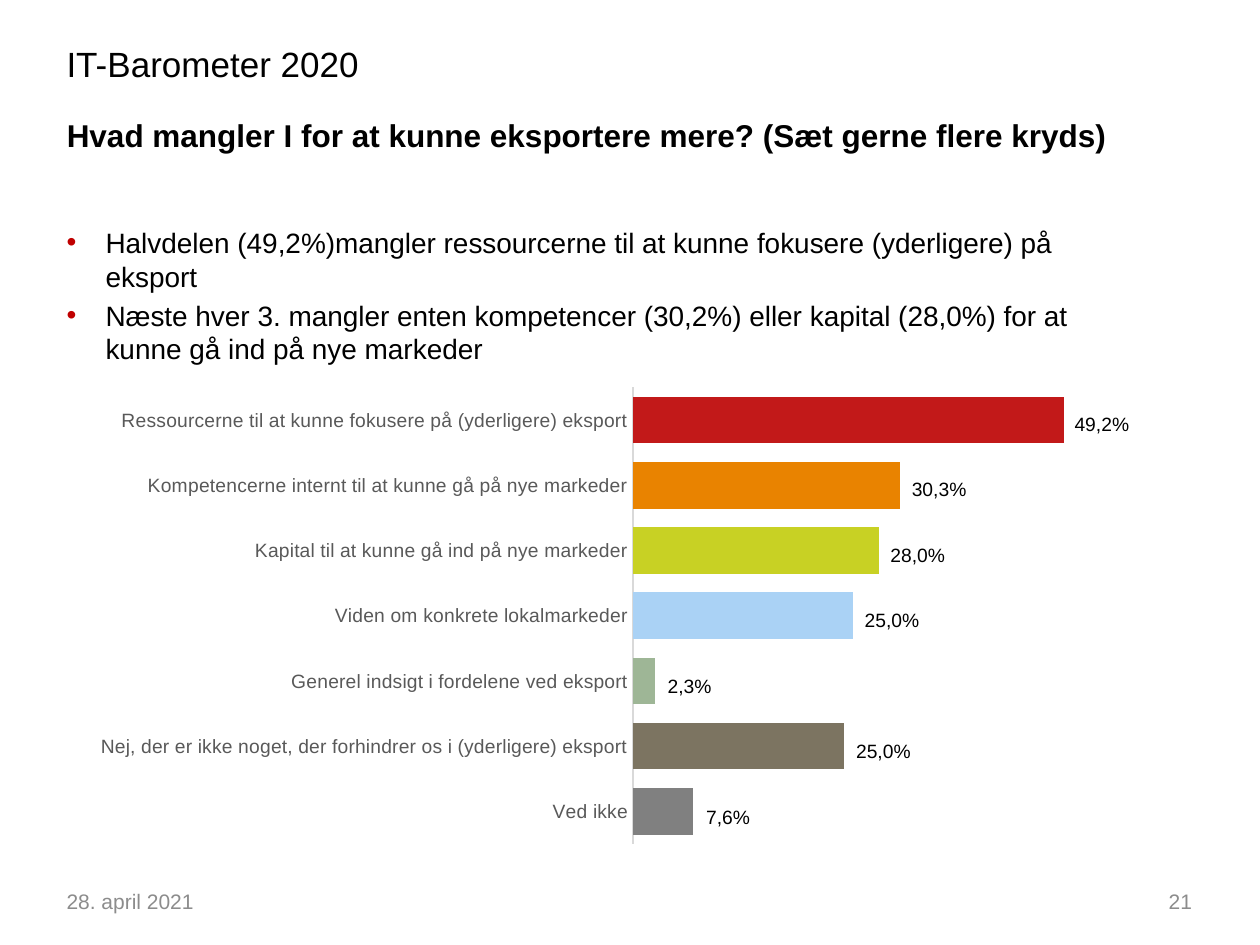
"""Build the IT-Barometer slide on what companies need to export more."""
from typing import NamedTuple

from lxml import etree
from pptx import Presentation
from pptx.chart.data import CategoryChartData
from pptx.dml.color import RGBColor
from pptx.enum.chart import XL_CHART_TYPE, XL_TICK_MARK
from pptx.enum.text import MSO_ANCHOR, MSO_AUTO_SIZE, PP_ALIGN
from pptx.oxml import parse_xml
from pptx.oxml.ns import nsdecls, qn
from pptx.util import Inches, Pt

BAR = XL_CHART_TYPE.BAR_CLUSTERED
NO_TICK = XL_TICK_MARK.NONE
TOP, MIDDLE = MSO_ANCHOR.TOP, MSO_ANCHOR.MIDDLE
LEFT, RIGHT = PP_ALIGN.LEFT, PP_ALIGN.RIGHT
GROW, FIXED = MSO_AUTO_SIZE.SHAPE_TO_FIT_TEXT, MSO_AUTO_SIZE.NONE

FONT = "Arial"
BLACK, GREY = "000000", "8C8C8C"
AXIS_X, UNIT = 5.03, 0.034
LABEL_TOP, LABEL_STEP = 3.22, 0.52
PLOT = {"x": 0.507, "y": 0.032, "w": 0.479, "h": 0.922}


class Answer(NamedTuple):
    text: str
    value: int
    share: str
    color: str


class Label(NamedTuple):
    text: str
    box: tuple
    size: int
    color: str = BLACK
    align: PP_ALIGN = LEFT
    anchor: MSO_ANCHOR = TOP


ANSWERS = [
    Answer("Ressourcerne til at kunne fokusere på (yderligere) eksport", 100, "49,2%", "C21919"),
    Answer("Kompetencerne internt til at kunne gå på nye markeder", 62, "30,3%", "E98300"),
    Answer("Kapital til at kunne gå ind på nye markeder", 57, "28,0%", "C8D124"),
    Answer("Viden om konkrete lokalmarkeder", 51, "25,0%", "AAD2F5"),
    Answer("Generel indsigt i fordelene ved eksport", 5, "2,3%", "9EB696"),
    Answer("Nej, der er ikke noget, der forhindrer os i (yderligere) eksport", 49, "25,0%", "7C7461"),
    Answer("Ved ikke", 14, "7,6%", "808080"),
]
LABELS = [
    Label("IT-Barometer 2020", (0.43, 0.29, 3.17, 0.4), 20),
    Label("28. april 2021", (0.43, 6.95, 2.33, 0.4), 12, GREY, LEFT, MIDDLE),
    Label("21", (7.23, 6.95, 2.33, 0.4), 12, GREY, RIGHT, MIDDLE),
]
TITLE = "Hvad mangler I for at kunne eksportere mere? (Sæt gerne flere kryds)"
BULLETS = [
    "Halvdelen (49,2%)mangler ressourcerne til at kunne fokusere (yderligere) på eksport",
    "Næste hver 3. mangler enten kompetencer (30,2%) eller kapital (28,0%) for at kunne gå ind på nye markeder",
]


def rgb(color: str) -> RGBColor:
    """Turn a hex string into a colour."""
    return RGBColor.from_string(color)


def set_font(font, size: int, color: str = BLACK, bold: bool = False) -> None:
    """Apply the slide's typeface with a size, colour and weight."""
    for name, value in {"name": FONT, "size": Pt(size), "bold": bold}.items():
        setattr(font, name, value)
    font.color.rgb = rgb(color)


def add_label(s, label: Label, wrap: bool = True):
    """Add a one-paragraph text box."""
    sp = s.shapes.add_textbox(*map(Inches, label.box))
    tf = sp.text_frame
    formats = {
        "text": label.text,
        "word_wrap": wrap,
        "vertical_anchor": label.anchor,
        "auto_size": FIXED if wrap else GROW,
    }
    for name, value in formats.items():
        setattr(tf, name, value)
    p = tf.paragraphs[0]
    p.alignment = label.align
    set_font(p.runs[0].font, label.size, label.color)


def add_title(s) -> None:
    """Place and format the title placeholder."""
    sp = s.shapes.title
    sp.left, sp.top, sp.width, sp.height = map(Inches, (0.43, 0.87, 9, 0.55))
    tf = sp.text_frame
    formats = {"text": TITLE, "word_wrap": True, "vertical_anchor": TOP, "auto_size": FIXED}
    for name, value in formats.items():
        setattr(tf, name, value)
    p = tf.paragraphs[0]
    p.alignment = LEFT
    set_font(p.runs[0].font, 18, bold=True)


def add_bullets(s) -> None:
    """Add the bulleted findings."""
    sp = s.shapes.add_textbox(*map(Inches, (0.43, 1.74, 8.23, 1.22)))
    tf = sp.text_frame
    tf.word_wrap = True
    for i, text in enumerate(BULLETS):
        p = tf.paragraphs[0] if i == 0 else tf.add_paragraph()
        pPr = p._p.get_or_add_pPr()
        pPr.set("marL", str(Inches(0.31)))
        pPr.set("indent", str(-Inches(0.31)))
        color = etree.SubElement(pPr, qn("a:buClr"))
        etree.SubElement(color, qn("a:srgbClr"), val="C00000")
        etree.SubElement(pPr, qn("a:buFont"), typeface=FONT)
        etree.SubElement(pPr, qn("a:buChar"), char="•")
        if i:
            p.space_before = Pt(3.2)
        r = p.add_run()
        r.text = text
        set_font(r.font, 16)


def add_answer_chart(s) -> None:
    """Add the bar chart with one colour per answer."""
    rows = ANSWERS[::-1]
    data = CategoryChartData()
    data.categories = [a.text for a in rows]
    data.add_series("Series 1", [a.value for a in rows])
    box = map(Inches, (0.68, 2.95, 8.57, 3.93))
    chart = s.shapes.add_chart(BAR, *box, data).chart
    chart.has_legend = chart.has_title = False
    set_font(chart.font, 10)

    cat = chart.category_axis
    cat.major_tick_mark = cat.minor_tick_mark = NO_TICK
    cat.has_major_gridlines = False
    set_font(cat.tick_labels.font, 11, "595959")
    cat.format.line.color.rgb = rgb("D9D9D9")
    cat.format.line.width = Pt(0.75)
    val = chart.value_axis
    formats = {"visible": False, "has_major_gridlines": False, "minimum_scale": 0, "maximum_scale": 120}
    for name, value in formats.items():
        setattr(val, name, value)
    val.tick_labels.number_format = "0.00%"
    val.tick_labels.number_format_is_linked = False

    plot = chart.plots[0]
    plot.gap_width, plot.overlap, plot.vary_by_categories = 40, -25, False
    series = plot.series[0]
    series.format.fill.solid()
    series.format.fill.fore_color.rgb = rgb(ANSWERS[0].color)
    for i, answer in enumerate(rows[:-1]):
        fill = series.points[i].format.fill
        fill.solid()
        fill.fore_color.rgb = rgb(answer.color)

    area = chart._chartSpace.chart.plotArea
    for old in area.findall(qn("c:layout")):
        area.remove(old)
    modes = '<c:layoutTarget val="inner"/><c:xMode val="edge"/><c:yMode val="edge"/>'
    sizes = "".join(f'<c:{k} val="{v}"/>' for k, v in PLOT.items())
    area.insert(0, parse_xml(
        f'<c:layout {nsdecls("c")}><c:manualLayout>{modes}{sizes}</c:manualLayout></c:layout>'))


def main() -> None:
    """Assemble and save the slide."""
    prs = Presentation()
    prs.slide_width, prs.slide_height = Inches(10), Inches(7.5)
    s = prs.slides.add_slide(prs.slide_layouts[5])
    add_title(s)
    add_answer_chart(s)
    for label in LABELS:
        add_label(s, label)
    add_bullets(s)
    for i, answer in enumerate(ANSWERS):
        width = 0.64 if len(answer.share) == 5 else 0.55
        box = (AXIS_X + UNIT * answer.value, LABEL_TOP + LABEL_STEP * i, width, 0.29)
        add_label(s, Label(answer.share, box, 11), wrap=False)
    prs.save("out.pptx")


if __name__ == "__main__":
    main()
